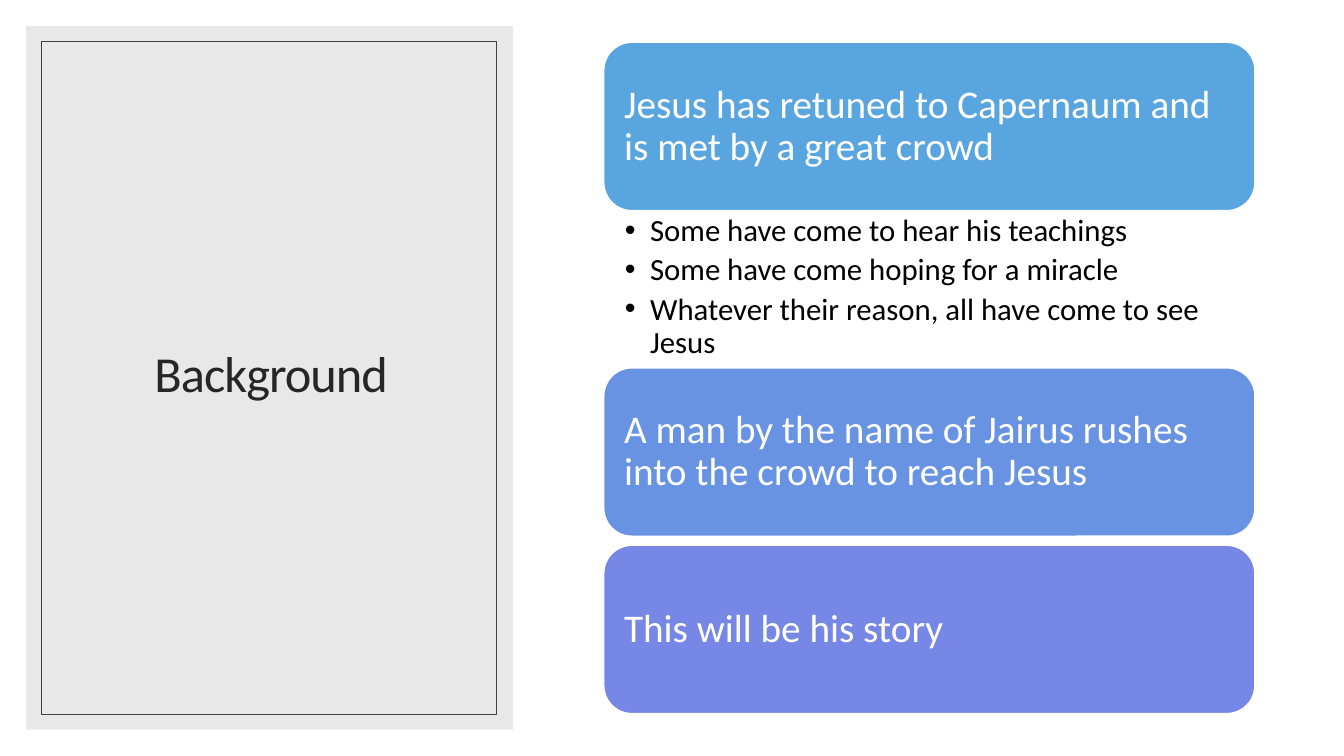
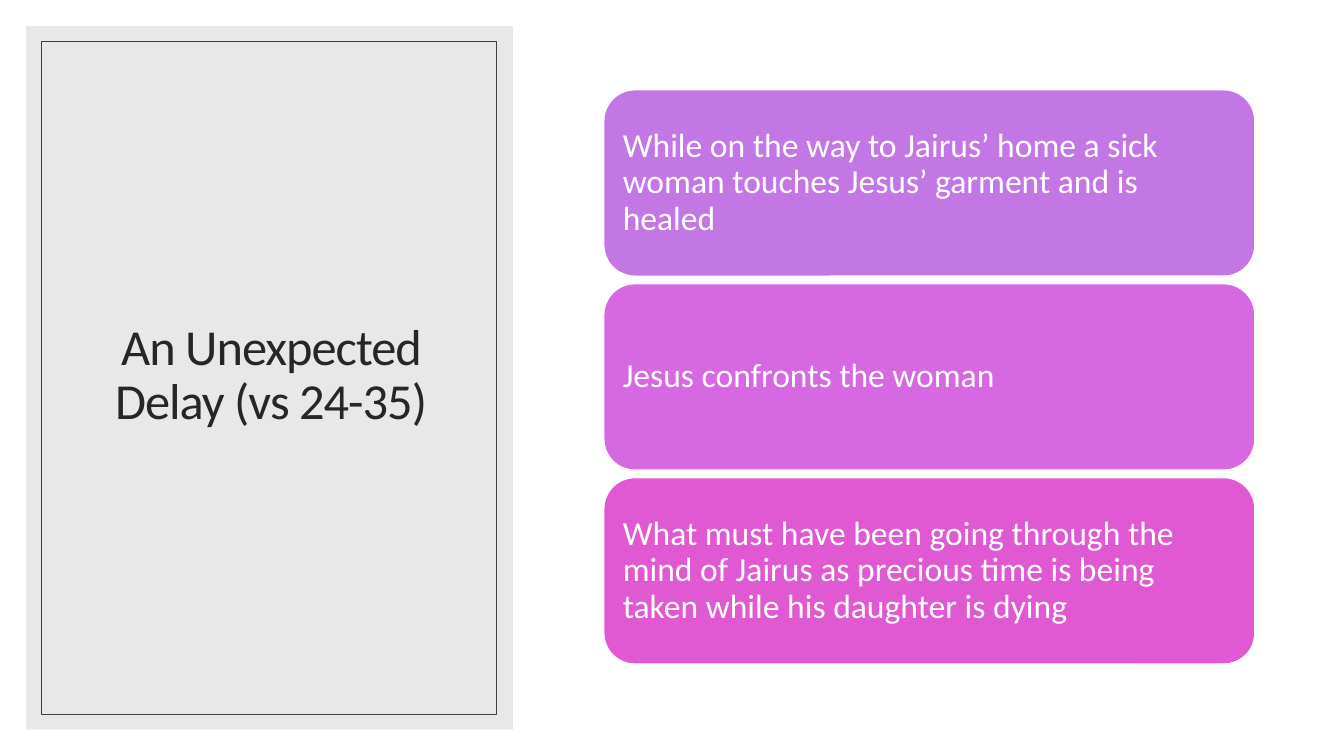
"""Build two slides with a framed title panel and a column of coloured cards."""
import pptx
import pptx.dml.color
import pptx.enum.shapes
import pptx.enum.text
import pptx.oxml
import pptx.oxml.ns
import pptx.util

Inches = pptx.util.Inches
Pt = pptx.util.Pt
SHAPES = pptx.enum.shapes.MSO_SHAPE
MIDDLE = pptx.enum.text.MSO_ANCHOR.MIDDLE
LEFT = pptx.enum.text.PP_ALIGN.LEFT
CENTER = pptx.enum.text.PP_ALIGN.CENTER
NO_AUTOFIT = pptx.enum.text.MSO_AUTO_SIZE.NONE
FONT = "Calibri"
CARD_LEFT, CARD_WIDTH = 5.99, 6.46
LIST_HEIGHT = 1.56

SLIDES = [
    {
        "title": "Background",
        "top": 0.42, "height": 1.67, "gap": 0.09, "inset": 0.12, "size": 28,
        "cards": [
            ("59A5E0", "Jesus has retuned to Capernaum and is met by a great crowd", [
                "Some have come to hear his teachings",
                "Some have come hoping for a miracle",
                "Whatever their reason, all have come to see Jesus",
            ]),
            ("6893E2", "A man by the name of Jairus rushes into the crowd to reach Jesus", []),
            ("7787E5", "This will be his story", []),
        ],
    },
    {
        "title": "An Unexpected Delay (vs 24-35)",
        "top": 0.89, "height": 1.85, "gap": 0.04 * 1.85, "inset": 0.1, "size": 24,
        "cards": [
            ("C377E5", "While on the way to Jairus’ home a sick woman touches Jesus’ garment and is healed", []),
            ("D668E2", "Jesus confronts the woman", []),
            ("E059D2", "What must have been going through the mind of Jairus as precious time "
                       "is being taken while his daughter is dying", []),
        ],
    },
]


def color(hex_string):
    return pptx.dml.color.RGBColor.from_string(hex_string)


def write(paragraph, text, size, hex_string, alignment):
    paragraph.alignment = alignment
    paragraph.line_spacing = 0.9
    paragraph.space_before = Pt(0)
    run = paragraph.add_run()
    run.text = text
    run.font.name = FONT
    run.font.size = Pt(size)
    run.font.color.rgb = color(hex_string)
    return run


presentation = pptx.Presentation()
presentation.slide_width = Inches(40 / 3)
presentation.slide_height = Inches(7.5)
layout = presentation.slide_layouts.get_by_name("Title and Content")

for content in SLIDES:
    slide = presentation.slides.add_slide(layout)

    panel = slide.shapes.add_shape(
        SHAPES.RECTANGLE, Inches(0.26), Inches(0.26), Inches(4.83), Inches(6.98))
    panel.shadow.inherit = False
    panel.fill.solid()
    panel.fill.fore_color.rgb = color("D9D9D9")
    panel.line.fill.background()
    panel_color = panel.element.spPr.find(".//" + pptx.oxml.ns.qn("a:srgbClr"))
    panel_color.append(pptx.oxml.parse_xml(
        f'<a:alpha {pptx.oxml.ns.nsdecls("a")} val="60000"/>'))
    slide.shapes.element.insert(2, panel.element)

    title = slide.shapes.title
    title.left, title.top = Inches(0.63), Inches(0.61)
    title.width, title.height = Inches(4.12), Inches(6.24)
    title.text_frame.vertical_anchor = MIDDLE
    title.text_frame.auto_size = NO_AUTOFIT
    run = write(title.text_frame.paragraphs[0], content["title"], 36, "262626", CENTER)
    run.font._element.set("spc", "-70")

    frame = slide.shapes.add_shape(
        SHAPES.RECTANGLE, Inches(0.41), Inches(0.41), Inches(4.51), Inches(6.68))
    frame.shadow.inherit = False
    frame.fill.background()
    frame.line.color.rgb = color("404040")
    frame.line.width = Pt(0.5)

    body = slide.placeholders[1]
    if not any(bullets for _, _, bullets in content["cards"]):
        slide.shapes.element.remove(body.element)

    top = content["top"]
    for fill, text, bullets in content["cards"]:
        card = slide.shapes.add_shape(
            SHAPES.ROUNDED_RECTANGLE, Inches(CARD_LEFT), Inches(top),
            Inches(CARD_WIDTH), Inches(content["height"]))
        card.shadow.inherit = False
        card.fill.solid()
        card.fill.fore_color.rgb = color(fill)
        card.line.color.rgb = color("FFFFFF")
        card.line.width = Pt(1)
        text_frame = card.text_frame
        text_frame.word_wrap = True
        text_frame.vertical_anchor = MIDDLE
        text_frame.margin_left = text_frame.margin_right = Inches(content["inset"])
        text_frame.margin_top = text_frame.margin_bottom = Inches(content["inset"])
        write(text_frame.paragraphs[0], text, content["size"], "FFFFFF", LEFT)
        top += content["height"]

        if not bullets:
            top += content["gap"]
            continue

        body.left, body.top = Inches(CARD_LEFT), Inches(top)
        body.width, body.height = Inches(CARD_WIDTH), Inches(LIST_HEIGHT)
        text_frame = body.text_frame
        text_frame.auto_size = NO_AUTOFIT
        text_frame.margin_left, text_frame.margin_right = Inches(0.21), Inches(0.22)
        text_frame.margin_top = text_frame.margin_bottom = Inches(0.04)
        for index, bullet in enumerate(bullets):
            paragraph = text_frame.add_paragraph() if index else text_frame.paragraphs[0]
            write(paragraph, bullet, 22, "000000", LEFT)
            paragraph.space_after = Pt(4.4)
            properties = paragraph._p.get_or_add_pPr()
            properties.set("marL", str(Inches(0.25)))
            properties.set("indent", str(Inches(-0.25)))
        top += LIST_HEIGHT

presentation.save("out.pptx")
